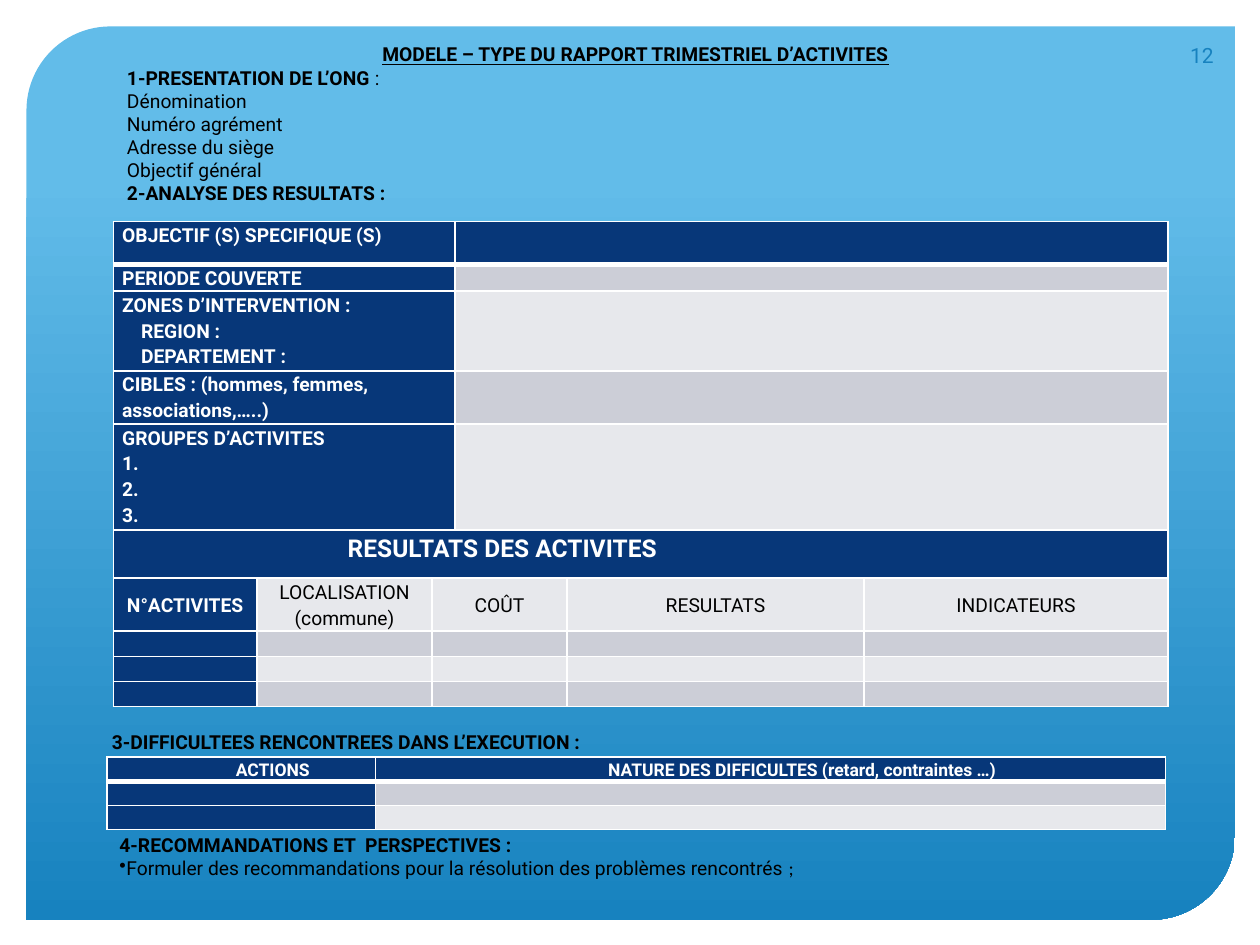
from pptx import Presentation
from pptx.dml.color import RGBColor
from pptx.enum.shapes import MSO_SHAPE as Shape
from pptx.enum.text import MSO_ANCHOR as Anchor, PP_ALIGN as Align
from pptx.oxml import parse_xml
from pptx.oxml.ns import nsdecls
from pptx.util import Inches, Pt

SKY = RGBColor(0x62, 0xBC, 0xE9)
BLUE = RGBColor(0x17, 0x82, 0xBF)
NAVY = RGBColor(0x07, 0x37, 0x79)
GREY = RGBColor(0xCC, 0xCE, 0xD7)
PALE = RGBColor(0xE7, 0xE8, 0xEC)
WHITE = RGBColor(0xFF, 0xFF, 0xFF)
BLACK = RGBColor(0, 0, 0)
FONT = "Roboto"

REPORT_COLUMNS = [1.14, 1.39, 0.18, 0.89, 2.36, 2.41]
REPORT_ROWS = [0.34, 0.2, 0.61, 0.41, 0.83, 0.38, 0.4, 0.2, 0.2, 0.2]
REPORT_LABELS = [
    "OBJECTIF (S) SPECIFIQUE (S)",
    "PERIODE COUVERTE\u00a0",
    "ZONES D’INTERVENTION\u00a0:\nREGION\u00a0:\nDEPARTEMENT\u00a0:",
    "CIBLES\u00a0: (hommes, femmes, associations,…..)",
    "GROUPES D’ACTIVITES\n1.\n2.\n3.",
    "RESULTATS DES ACTIVITES",
    "N°ACTIVITES",
]
RESULT_HEADINGS = {1: "LOCALISATION\n(commune)", 2: "COÛT", 4: "RESULTATS", 5: "INDICATEURS"}
TITLE_ROW, HEADING_ROW = 5, 6


def format_run(run, size=11, color=BLACK, bold=False, font=FONT):
    run.font.name = font
    run.font.size = Pt(size)
    run.font.bold = bold
    run.font.color.rgb = color


def add_text(slide, box, paragraphs, anchor=Anchor.TOP):
    shape = slide.shapes.add_textbox(*map(Inches, box))
    frame = shape.text_frame
    frame.word_wrap = True
    frame.vertical_anchor = anchor
    for index, runs in enumerate(paragraphs):
        paragraph = frame.add_paragraph() if index else frame.paragraphs[0]
        for text, style in runs:
            run = paragraph.add_run()
            run.text = text
            format_run(run, **style)
    return frame


def add_background(slide):
    shape = slide.shapes.add_shape(
        Shape.ROUND_2_DIAG_RECTANGLE, Inches(0.21), Inches(0.21), Inches(9.59), Inches(7.09))
    shape.shadow.inherit = False
    shape.adjustments[0], shape.adjustments[1] = 0.094, 0
    shape.line.fill.background()
    shape.fill.gradient()
    shape.fill.gradient_angle = 270
    for stop, position, color in zip(shape.fill.gradient_stops, (0.17, 1), (SKY, BLUE)):
        stop.position = position
        stop.color.rgb = color


def set_borders(cell, row):
    properties = cell._tc.get_or_add_tcPr()
    thick_side = {0: "lnB", 1: "lnT"}.get(row)
    for side in ("lnL", "lnR", "lnT", "lnB"):
        width = Pt(3 if side == thick_side else 1)
        properties.append(parse_xml(
            f'<a:{side} {nsdecls("a")} w="{width}"><a:solidFill>'
            f'<a:srgbClr val="{WHITE}"/></a:solidFill></a:{side}>'))


def format_cell(cell, row, dark, size):
    set_borders(cell, row)
    cell.fill.solid()
    cell.fill.fore_color.rgb = NAVY if dark else GREY if row % 2 else PALE
    cell.margin_left = cell.margin_right = Inches(0.07)
    cell.margin_top = cell.margin_bottom = 0
    for paragraph in cell.text_frame.paragraphs:
        paragraph.line_spacing = 1.15
        for run in paragraph.runs:
            format_run(run, size, WHITE if dark else BLACK, dark)
        if not paragraph.runs:
            paragraph._p.get_or_add_endParaRPr().set("sz", str(size * 100))


def center_cell(cell):
    cell.vertical_anchor = Anchor.MIDDLE
    for paragraph in cell.text_frame.paragraphs:
        paragraph.alignment = Align.CENTER


def indent(paragraph, inches):
    paragraph._p.get_or_add_pPr().set("marL", str(Inches(inches)))


def add_table(slide, left, top, columns, rows, texts, dark_rows, size):
    frame = slide.shapes.add_table(
        len(rows), len(columns), Inches(left), Inches(top),
        Inches(sum(columns)), Inches(sum(rows)))
    table = frame.table
    table.first_row = table.horz_banding = False
    for column, width in zip(table.columns, columns):
        column.width = Inches(width)
    for row, height in enumerate(rows):
        table.rows[row].height = Inches(height)
        for column in range(len(columns)):
            cell = table.cell(row, column)
            cell.text_frame.text = texts.get((row, column), "")
            format_cell(cell, row, row in dark_rows or column == 0, size)
    return table


def add_report_table(slide):
    texts = {(row, 0): label for row, label in enumerate(REPORT_LABELS)}
    texts.update({(HEADING_ROW, column): text for column, text in RESULT_HEADINGS.items()})
    table = add_table(slide, 0.9, 1.76, REPORT_COLUMNS, REPORT_ROWS, texts, (0, TITLE_ROW), 11)
    for row in range(TITLE_ROW):
        table.cell(row, 0).merge(table.cell(row, 2))
        table.cell(row, 3).merge(table.cell(row, 5))
    table.cell(TITLE_ROW, 0).merge(table.cell(TITLE_ROW, 5))
    for row in range(HEADING_ROW, len(REPORT_ROWS)):
        table.cell(row, 2).merge(table.cell(row, 3))
    for column in (0, *RESULT_HEADINGS):
        center_cell(table.cell(HEADING_ROW, column))
    for paragraph in table.cell(2, 0).text_frame.paragraphs[1:]:
        indent(paragraph, 0.15)
    title = table.cell(TITLE_ROW, 0).text_frame.paragraphs[0]
    indent(title, 1.79)
    title.runs[0].font.size = Pt(14)


def add_difficulties_table(slide):
    texts = {(0, 0): "ACTIONS", (0, 1): "NATURE DES DIFFICULTES (retard, contraintes …)"}
    table = add_table(slide, 0.85, 6.01, [2.13, 6.27], [0.19] * 3, texts, (0,), 10)
    for column in range(2):
        cell = table.cell(0, column)
        center_cell(cell)
        indent(cell.text_frame.paragraphs[0], 0.5)


def add_presentation_text(slide):
    bold = {"bold": True}
    lines = ["Dénomination", "Numéro agrément", "Adresse du siège", "Objectif général"]
    frame = add_text(slide, (0.91, 0.29, 8.27, 1.4), [
        [("MODELE – TYPE DU RAPPORT TRIMESTRIEL D’ACTIVITES", bold)],
        [("1-PRESENTATION DE L’ONG", bold), ("\u00a0:", {})],
        *[[(line, {})] for line in lines],
        [("2-ANALYSE DES RESULTATS\u00a0:", bold)],
    ])
    title = frame.paragraphs[0]
    title.alignment = Align.CENTER
    title.runs[0].font.underline = True


def add_recommendations(slide):
    frame = add_text(slide, (0.85, 6.19, 8.4, 0.84), [
        [("4-RECOMMANDATIONS ET  PERSPECTIVES\u00a0:", {"bold": True})],
        [("Formuler des recommandations pour la résolution des problèmes rencontrés\u00a0", {}),
         (";", {"font": "Calibri"})],
    ], Anchor.BOTTOM)
    properties = frame.paragraphs[1]._p.get_or_add_pPr()
    properties.append(parse_xml(f'<a:buChar {nsdecls("a")} char="•"/>'))


def main():
    presentation = Presentation()
    presentation.slide_width, presentation.slide_height = Inches(10), Inches(7.5)
    slide = presentation.slides.add_slide(presentation.slide_layouts[6])
    add_background(slide)
    number = add_text(slide, (9.19, 0.24, 0.54, 0.4),
                      [[("12", {"size": 12, "color": BLUE})]], Anchor.MIDDLE)
    number.paragraphs[0].alignment = Align.RIGHT
    difficulties = add_text(slide, (0.79, 5.56, 8.43, 0.87), [
        [("3-DIFFICULTEES RENCONTREES DANS L’EXECUTION\u00a0:", {"bold": True})]])
    difficulties.margin_top = Inches(0.24)
    add_report_table(slide)
    add_presentation_text(slide)
    add_difficulties_table(slide)
    add_recommendations(slide)
    presentation.save("out.pptx")


if __name__ == "__main__":
    main()
